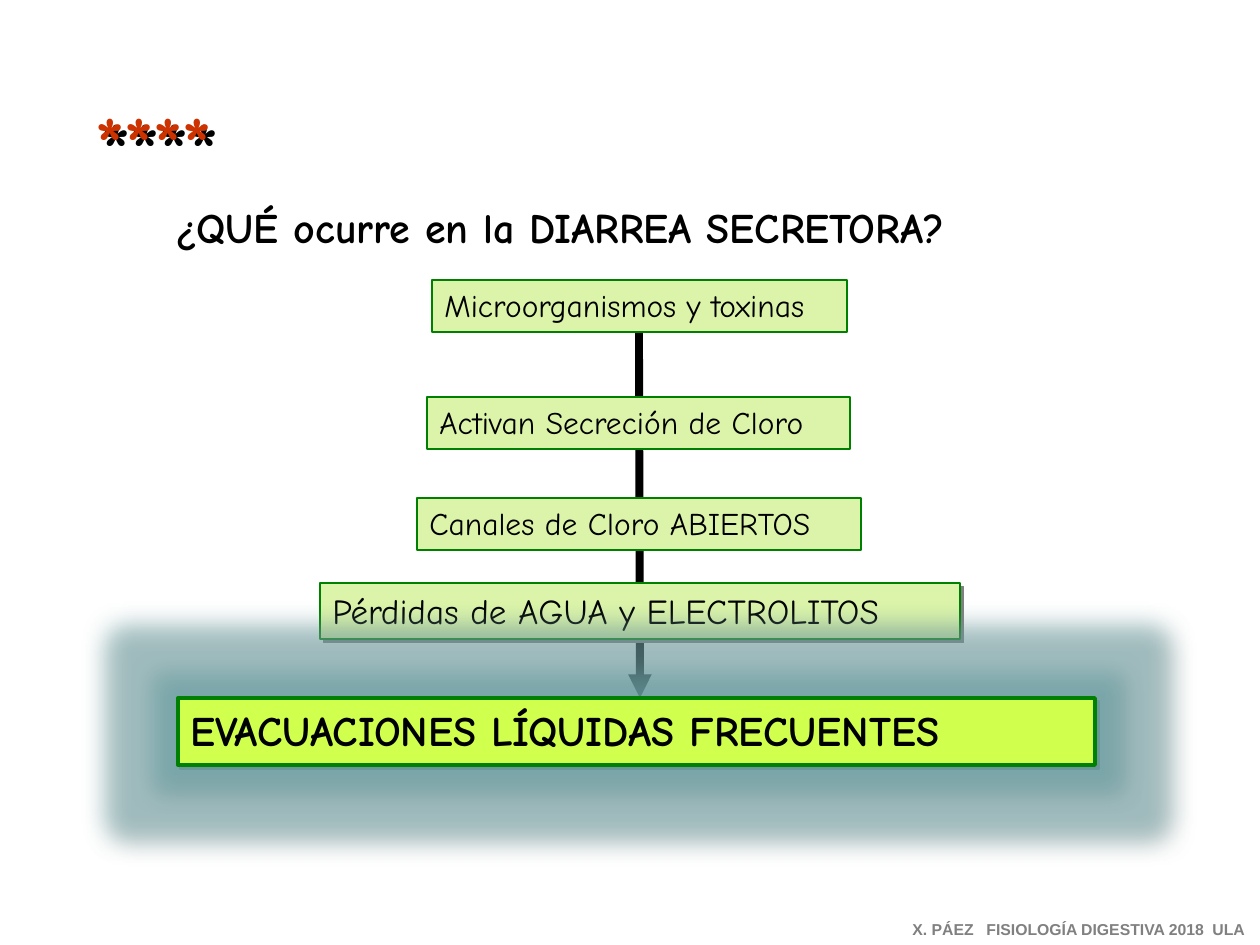
"""Build a slide with the chain of events in secretory diarrhoea."""
import lxml.etree
import pptx
import pptx.dml.color
import pptx.enum.shapes
import pptx.enum.text
import pptx.oxml.ns
import pptx.util

EMU_PER_PX = 914400 / 126
BLACK = pptx.dml.color.RGBColor(0x00, 0x00, 0x00)
RED = pptx.dml.color.RGBColor(0xCC, 0x33, 0x00)
GRAY = pptx.dml.color.RGBColor(0x80, 0x80, 0x80)
GREEN = pptx.dml.color.RGBColor(0x00, 0x80, 0x00)
PALE_GREEN = pptx.dml.color.RGBColor(0xDB, 0xF4, 0xAA)
LIME = pptx.dml.color.RGBColor(0xD0, 0xFF, 0x4D)
TEAL = pptx.dml.color.RGBColor(0x5F, 0xA3, 0xA8)

TITLE = ("¿QUÉ ocurre en la DIARREA SECRETORA?", (163, 195, 935, 63))
MARK = ("****", (83, 88, 234, 106))
FOOTER = ("X. PÁEZ\tFISIOLOGÍA DIGESTIVA 2018\tULA", (900, 914, 360, 31))
FOOTER_TABS = (74, 300)
ARROW = (639, 331, 640, 698)
STEPS = [
    {"text": "Microorganismos y toxinas", "box": (432, 280, 415, 52)},
    {"text": "Activan Secreción de Cloro", "box": (427, 397, 423, 52)},
    {"text": "Canales de Cloro ABIERTOS", "box": (417, 498, 444, 52)},
    {"text": "Pérdidas de AGUA y ELECTROLITOS", "box": (320, 583, 640, 56),
     "size": 20, "shadow": True},
    {"text": "EVACUACIONES LÍQUIDAS FRECUENTES", "box": (178, 698, 917, 67),
     "size": 24, "bold": True, "fill": LIME, "line": 2.25, "shadow": True, "glow": True},
]


def px(value):
    return pptx.util.Emu(round(value * EMU_PER_PX))


def add_element(parent, tag, **attributes):
    element = lxml.etree.SubElement(parent, pptx.oxml.ns.qn(tag))
    for name, value in attributes.items():
        element.set(name, str(value))
    return element


def write_text(shape, text, size=18, color=BLACK, bold=False, font="Comic Neue", wrap=True):
    frame = shape.text_frame
    frame.word_wrap = wrap
    frame.auto_size = pptx.enum.text.MSO_AUTO_SIZE.NONE
    frame.vertical_anchor = pptx.enum.text.MSO_ANCHOR.TOP
    paragraph = frame.paragraphs[0]
    paragraph.alignment = pptx.enum.text.PP_ALIGN.LEFT
    paragraph.line_spacing = 1.0
    run = paragraph.add_run()
    run.text = text
    run.font.size = pptx.util.Pt(size)
    run.font.name = font
    run.font.bold = bold
    run.font.color.rgb = color
    return paragraph


def add_effect(shape, tag, color, opacity=100, **attributes):
    shape.shadow.inherit = False if shape._element.spPr.find(
        pptx.oxml.ns.qn("a:effectLst")) is None else shape.shadow.inherit
    effects = shape._element.spPr.find(pptx.oxml.ns.qn("a:effectLst"))
    effect = add_element(effects, tag, **attributes)
    color_element = add_element(effect, "a:srgbClr", val=color)
    add_element(color_element, "a:alpha", val=opacity * 1000)


def add_shadow(shape, color, distance):
    add_effect(shape, "a:outerShdw", color, dist=pptx.util.Pt(distance),
               dir=45 * 60000, algn="ctr", rotWithShape=0)


def add_arrow(slide):
    arrow = slide.shapes.add_connector(
        pptx.enum.shapes.MSO_CONNECTOR.STRAIGHT, *map(px, ARROW))
    arrow.line.color.rgb = BLACK
    arrow.line.width = pptx.util.Pt(4.5)
    add_element(arrow.line._get_or_add_ln(), "a:tailEnd", type="triangle")
    add_element(arrow._element.spPr, "a:effectLst")


def add_step(slide, step):
    shape = slide.shapes.add_shape(
        pptx.enum.shapes.MSO_SHAPE.RECTANGLE, *map(px, step["box"]))
    shape.shadow.inherit = False
    shape.fill.solid()
    shape.fill.fore_color.rgb = step.get("fill", PALE_GREEN)
    shape.line.color.rgb = GREEN
    shape.line.width = pptx.util.Pt(step.get("line", 0.75))
    if step.get("glow"):
        add_effect(shape, "a:glow", TEAL, opacity=40, rad=pptx.util.Pt(28))
    if step.get("shadow"):
        add_shadow(shape, GRAY, 2.8)
    write_text(shape, step["text"], size=step.get("size", 18), bold=step.get("bold", False))


def main():
    presentation = pptx.Presentation()
    presentation.slide_width, presentation.slide_height = px(1260), px(945)
    slide = presentation.slides.add_slide(presentation.slide_layouts[5])

    text, box = TITLE
    title = slide.shapes.title
    title.left, title.top, title.width, title.height = map(px, box)
    write_text(title, text, size=24, bold=True)

    add_arrow(slide)
    for step in STEPS:
        add_step(slide, step)

    text, box = MARK
    mark = slide.shapes.add_textbox(*map(px, box))
    write_text(mark, text, size=44, color=RED, bold=True)
    add_shadow(mark, BLACK, 5)

    text, box = FOOTER
    footer = slide.shapes.add_textbox(*map(px, box))
    paragraph = write_text(footer, text, size=9, color=GRAY, bold=True, font="Arial", wrap=False)
    tabs = add_element(paragraph._p.get_or_add_pPr(), "a:tabLst")
    for position in FOOTER_TABS:
        add_element(tabs, "a:tab", pos=px(position), algn="l")

    presentation.save("out.pptx")


if __name__ == "__main__":
    main()
